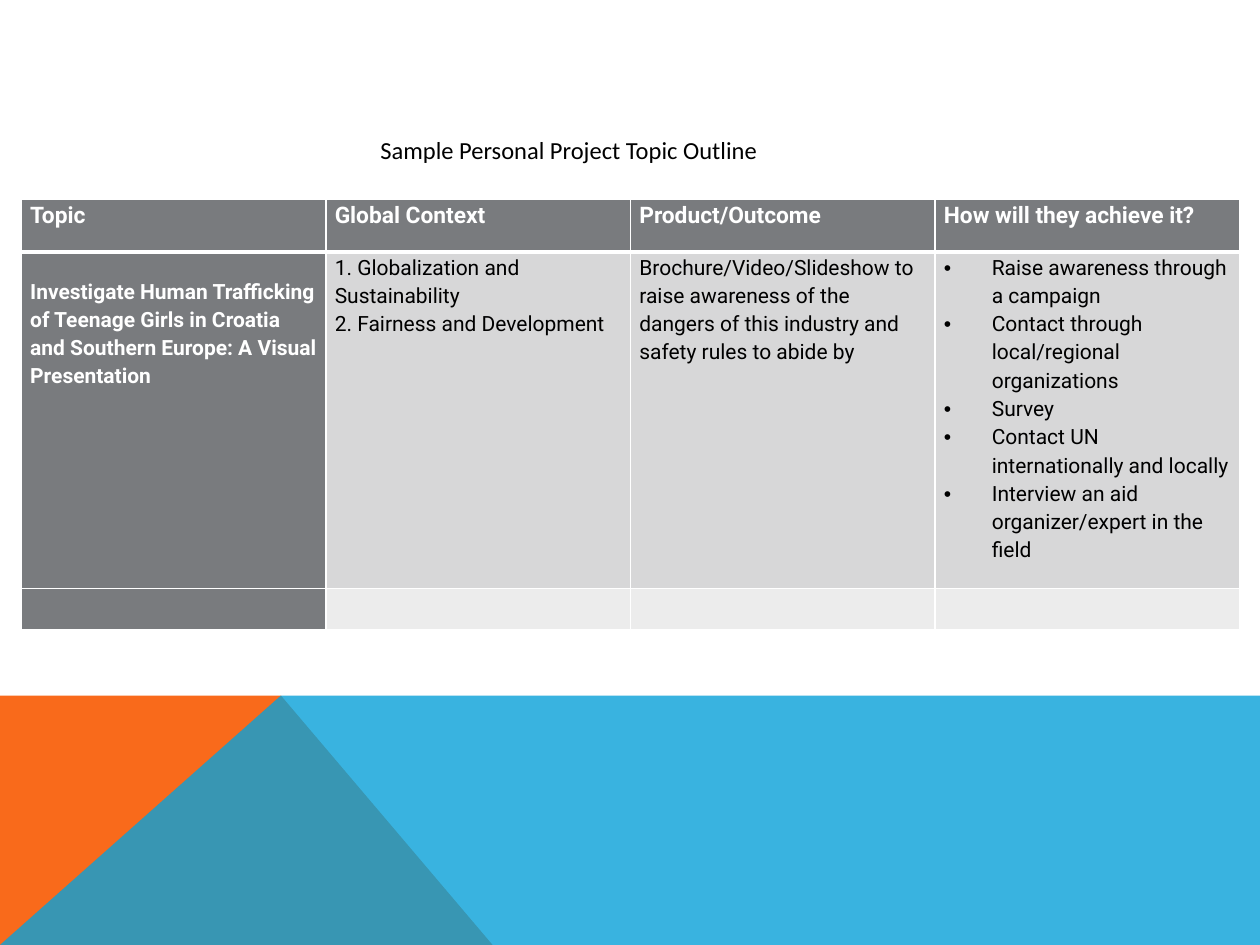
from lxml import etree
from pptx import Presentation
from pptx.dml.color import RGBColor
from pptx.oxml import parse_xml
from pptx.oxml.ns import nsdecls, qn
from pptx.util import Inches, Pt

WHITE = RGBColor(0xFF, 0xFF, 0xFF)
BLACK = RGBColor(0, 0, 0)
ORANGE = RGBColor(0xF9, 0x6A, 0x1B)
BLUE = RGBColor(0x08, 0xA1, 0xD9)
SLATE = RGBColor(0x79, 0x7B, 0x7E)
BAND_DARK = RGBColor(0xD7, 0xD7, 0xD8)
BAND_LIGHT = RGBColor(0xEC, 0xEC, 0xEC)

HEADER = ["Topic", "Global Context", "Product/Outcome", "How will they achieve it?"]
TOPIC = ("Investigate Human Trafficking of Teenage Girls in Croatia "
         "and Southern Europe: A Visual Presentation")
CONTEXTS = ["1. Globalization and Sustainability", "2. Fairness and Development"]
OUTCOME = ("Brochure/Video/Slideshow to raise awareness of the dangers "
           "of this industry and safety rules to abide by")
STEPS = ["Raise awareness through a campaign",
         "Contact through local/regional organizations",
         "Survey",
         "Contact UN internationally and locally",
         "Interview an aid organizer/expert in the field"]


class SlideBuilder:
    """Places elements on one slide; positions are inches on a 10 x 7.5 grid."""
    title_font, table_font = "Calibri", "Roboto"
    spacing = 1.15
    side_margin = Inches(0.07)
    indent = Inches(0.38)

    def __init__(self, prs):
        self.s = prs.slides.add_slide(prs.slide_layouts[6])

    def polygon(self, points, color, opacity=100):
        pts = [(Inches(x), Inches(y)) for x, y in points]
        builder = self.s.shapes.build_freeform(*pts[0])
        builder.add_line_segments(pts[1:], close=True)
        sp = builder.convert_to_shape()
        sp.shadow.inherit = False
        sp.line.fill.background()
        sp.fill.solid()
        sp.fill.fore_color.rgb = color
        if opacity < 100:
            clr = sp.fill._xPr.find(".//" + qn("a:srgbClr"))
            etree.SubElement(clr, qn("a:alpha"), val=str(opacity * 1000))

    def title(self, text, x, y, w, h):
        tf = self.s.shapes.add_textbox(*map(Inches, (x, y, w, h))).text_frame
        tf.word_wrap = True
        tf.text = text
        self.style(tf.paragraphs[0], self.title_font, 14, BLACK)

    def table(self, x, y, w, row_heights, cols):
        frame = self.s.shapes.add_table(len(row_heights), cols, Inches(x), Inches(y),
                                        Inches(w), Inches(sum(row_heights)))
        for row, height in zip(frame.table.rows, row_heights):
            row.height = Inches(height)
        return frame.table

    def cell(self, cell, lines, fill, size=12, color=BLACK, bold=False,
             bullets=False, top=0, borders=(1, 1)):
        cell.margin_left = cell.margin_right = self.side_margin
        cell.margin_top, cell.margin_bottom = Inches(top), 0
        self.borders(cell, *borders)
        cell.fill.solid()
        cell.fill.fore_color.rgb = fill
        cell.text_frame.text = "\n".join(lines)
        for p in cell.text_frame.paragraphs:
            p.line_spacing = self.spacing
            self.style(p, self.table_font, size, color, bold)
            if bullets:
                self.bullet(p)

    def borders(self, cell, top, bottom):
        tcPr = cell._tc.get_or_add_tcPr()
        for side, width in (("L", 1), ("R", 1), ("T", top), ("B", bottom)):
            tcPr.append(parse_xml(
                f'<a:ln{side} {nsdecls("a")} w="{Pt(width)}"><a:solidFill>'
                f'<a:srgbClr val="{WHITE}"/></a:solidFill></a:ln{side}>'))

    def bullet(self, p):
        pPr = p._p.get_or_add_pPr()
        pPr.set("marL", str(self.indent))
        pPr.set("indent", str(-self.indent))
        etree.SubElement(pPr, qn("a:buFont"), typeface="Arial")
        etree.SubElement(pPr, qn("a:buChar"), char="•")

    @staticmethod
    def style(p, font, size, color, bold=False):
        for r in p.runs:
            r.font.name, r.font.size, r.font.bold = font, Pt(size), bold
            r.font.color.rgb = color


def main():
    prs = Presentation()
    prs.slide_width, prs.slide_height = Inches(10), Inches(7.5)
    b = SlideBuilder(prs)

    # Footer bands: the translucent blue overlaps the orange
    top, bottom, peak = 5.52, 7.5, 2.23
    b.polygon([(0, bottom), (0, top), (peak, top), (3.91, bottom)], ORANGE)
    b.polygon([(0, bottom), (peak, top), (10, top), (10, bottom)], BLUE, opacity=80)

    # Topic outline table
    table = b.table(0.17, 1.58, 9.67, [0.42, 2.67, 0.33], len(HEADER))
    for col, heading in enumerate(HEADER):
        b.cell(table.cell(0, col), [heading], SLATE, 13, WHITE, True, borders=(1, 3))
        b.cell(table.cell(2, col), [], BAND_LIGHT if col else SLATE)
    b.cell(table.cell(1, 0), [TOPIC], SLATE, color=WHITE, bold=True, top=0.19,
           borders=(3, 1))
    for col, lines in enumerate([CONTEXTS, [OUTCOME], STEPS], start=1):
        b.cell(table.cell(1, col), lines, BAND_DARK, bullets=lines is STEPS,
               borders=(3, 1))

    # Title
    b.title("Sample Personal Project Topic Outline", 2.92, 1.02, 3.67, 0.64)
    prs.save("out.pptx")


if __name__ == "__main__":
    main()
